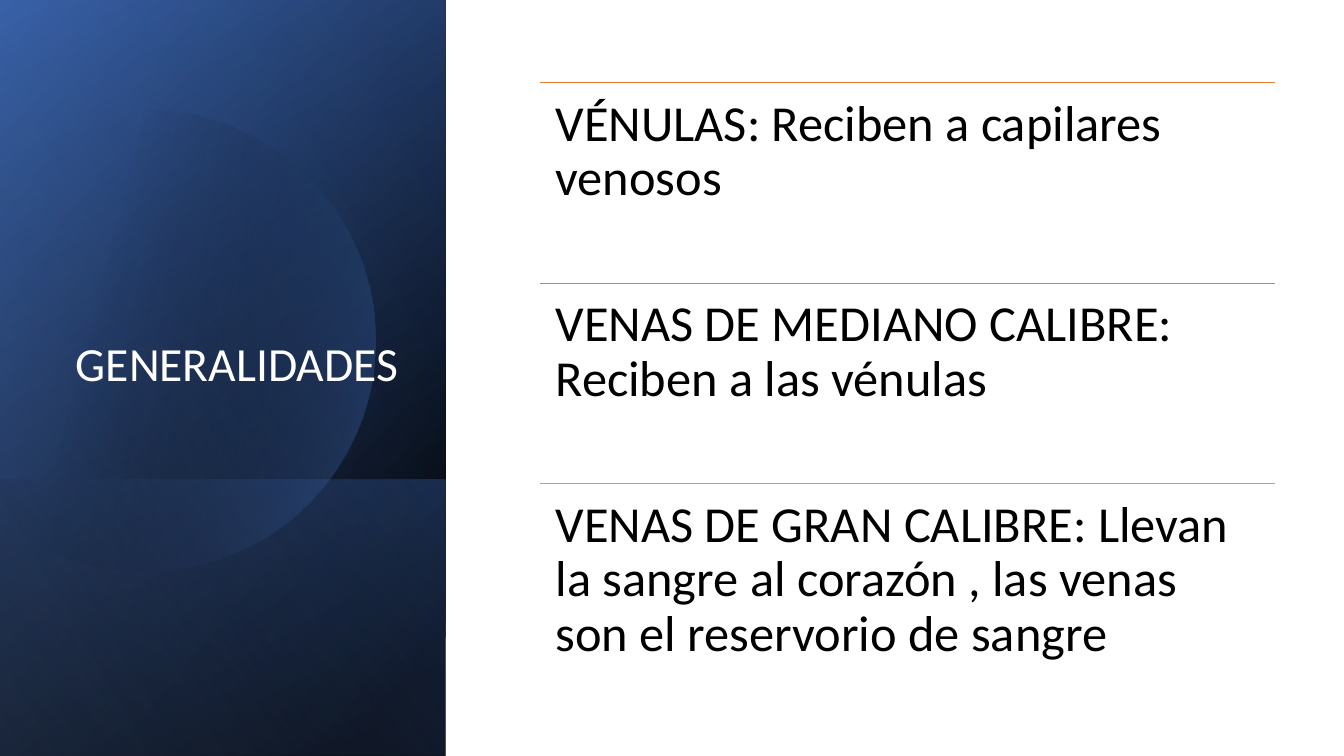
import math

from pptx import Presentation
from pptx.dml.color import RGBColor
from pptx.enum import shapes, text
from pptx.oxml import ns, xmlchemy
from pptx.util import Inches, Pt

COLORS = {
    "white": "FFFFFF",
    "black": "000000",
    "navy": "2F5597",
    "blue": "4472C4",
    "pale_blue": "8FAADC",
    "orange": "ED7D31",
    "brown": "C48170",
    "gray": "A5A5A5",
}
FONT = "Calibri"
PANEL_WIDTH, PANEL_HEIGHT = 4.42, 7.5
SECTION_LEFT, SECTION_TOP = 5.36, 0.82
SECTION_WIDTH, SECTION_HEIGHT = 7.29, 1.99
SECTIONS = [
    ("orange", "VÉNULAS: Reciben a capilares venosos"),
    ("brown", "VENAS DE MEDIANO CALIBRE: Reciben a las vénulas"),
    ("gray", "VENAS DE GRAN CALIBRE: Llevan la sangre al corazón , "
             "las venas son el reservorio de sangre"),
]


def rgb(name):
    return RGBColor.from_string(COLORS[name])


def fill_gradient(shape, stops, angle):
    """Fill with two (position %, color, opacity %) stops, angle clockwise."""
    shape.shadow.inherit = False
    shape.line.fill.background()
    shape.fill.gradient()
    shape.fill.gradient_angle = (360 - angle) % 360
    for stop, (position, color, opacity) in zip(shape.fill.gradient_stops, stops):
        stop.position = position / 100
        stop.color.rgb = rgb(color)
    color_elements = shape.element.spPr.findall(".//" + ns.qn("a:srgbClr"))
    for element, (_, _, opacity) in zip(color_elements, stops):
        if opacity < 100:
            alpha = xmlchemy.OxmlElement("a:alpha")
            alpha.set("val", str(opacity * 1000))
            element.append(alpha)


def add_panel(slide, top, height, stops, angle):
    """Add a mirrored quarter-turned rectangle over the left column."""
    shape = slide.shapes.add_shape(
        shapes.MSO_SHAPE.RECTANGLE,
        Inches((PANEL_WIDTH - height) / 2), Inches(top + (height - PANEL_WIDTH) / 2),
        Inches(height), Inches(PANEL_WIDTH))
    shape.rotation = 90
    shape.element.spPr.xfrm.set("flipH", "1")
    fill_gradient(shape, stops, angle)


def add_disc(slide, center_x, center_y, radius, stops, angle):
    """Add a disc cut off by the left edge of the slide."""
    cut = math.acos(-center_x / radius)
    steps = 120
    angles = [cut * (2 * step / steps - 1) for step in range(steps + 1)]
    points = [(Inches(center_x + radius * math.cos(a)),
               Inches(center_y + radius * math.sin(a))) for a in angles]
    builder = slide.shapes.build_freeform(*points[0])
    builder.add_line_segments(points[1:], close=True)
    fill_gradient(builder.convert_to_shape(), stops, angle)


def write_text(frame, words, size, color, alignment):
    frame.word_wrap = True
    frame.auto_size = text.MSO_AUTO_SIZE.NONE
    paragraph = frame.paragraphs[0]
    paragraph.alignment = alignment
    paragraph.line_spacing = 0.9
    run = paragraph.add_run()
    run.text = words
    run.font.name = FONT
    run.font.size = Pt(size)
    run.font.color.rgb = rgb(color)


def place_title(slide, words):
    title = slide.shapes.title
    title.left, title.top = Inches(0.64), Inches(1.84)
    title.width, title.height = Inches(3.41), Inches(2.62)
    frame = title.text_frame
    frame.vertical_anchor = text.MSO_ANCHOR.BOTTOM
    frame.margin_bottom = Inches(0.57)
    write_text(frame, words, 34, "white", text.PP_ALIGN.RIGHT)
    # Bring the title in front of the panels
    title.element.getparent().append(title.element)


def add_section(group, top, color, words):
    left, width = Inches(SECTION_LEFT), Inches(SECTION_WIDTH)
    rule = group.shapes.add_connector(
        shapes.MSO_CONNECTOR.STRAIGHT, left, Inches(top), left + width, Inches(top))
    rule.line.color.rgb = rgb(color)
    rule.line.width = Pt(0.5)
    rule.element.spPr.append(xmlchemy.OxmlElement("a:effectLst"))

    box = group.shapes.add_textbox(left, Inches(top), width, Inches(SECTION_HEIGHT))
    frame = box.text_frame
    frame.margin_left = frame.margin_right = Inches(0.15)
    frame.margin_top = frame.margin_bottom = Inches(0.15)
    write_text(frame, words, 36, "black", text.PP_ALIGN.LEFT)


def main():
    presentation = Presentation()
    presentation.slide_width = Inches(13.33)
    presentation.slide_height = Inches(7.5)
    slide = presentation.slides.add_slide(presentation.slide_layouts[5])

    add_panel(slide, 0, PANEL_HEIGHT, [(8, "black", 100), (100, "navy", 100)], 50)
    add_panel(slide, 0, PANEL_HEIGHT, [(0, "black", 0), (99, "blue", 46)], 30)
    add_panel(slide, 4.76, 2.74, [(2, "blue", 29), (100, "black", 30)], 130)
    add_disc(slide, 1.43, 3.38, 2.29, [(29, "black", 0), (100, "blue", 43)], 14)
    add_panel(slide, 0, PANEL_HEIGHT, [(0, "black", 0), (99, "pale_blue", 11)], 120)
    place_title(slide, "GENERALIDADES")

    group = slide.shapes.add_group_shape()
    for index, (color, words) in enumerate(SECTIONS):
        add_section(group, SECTION_TOP + index * SECTION_HEIGHT, color, words)

    presentation.save("out.pptx")


if __name__ == "__main__":
    main()
